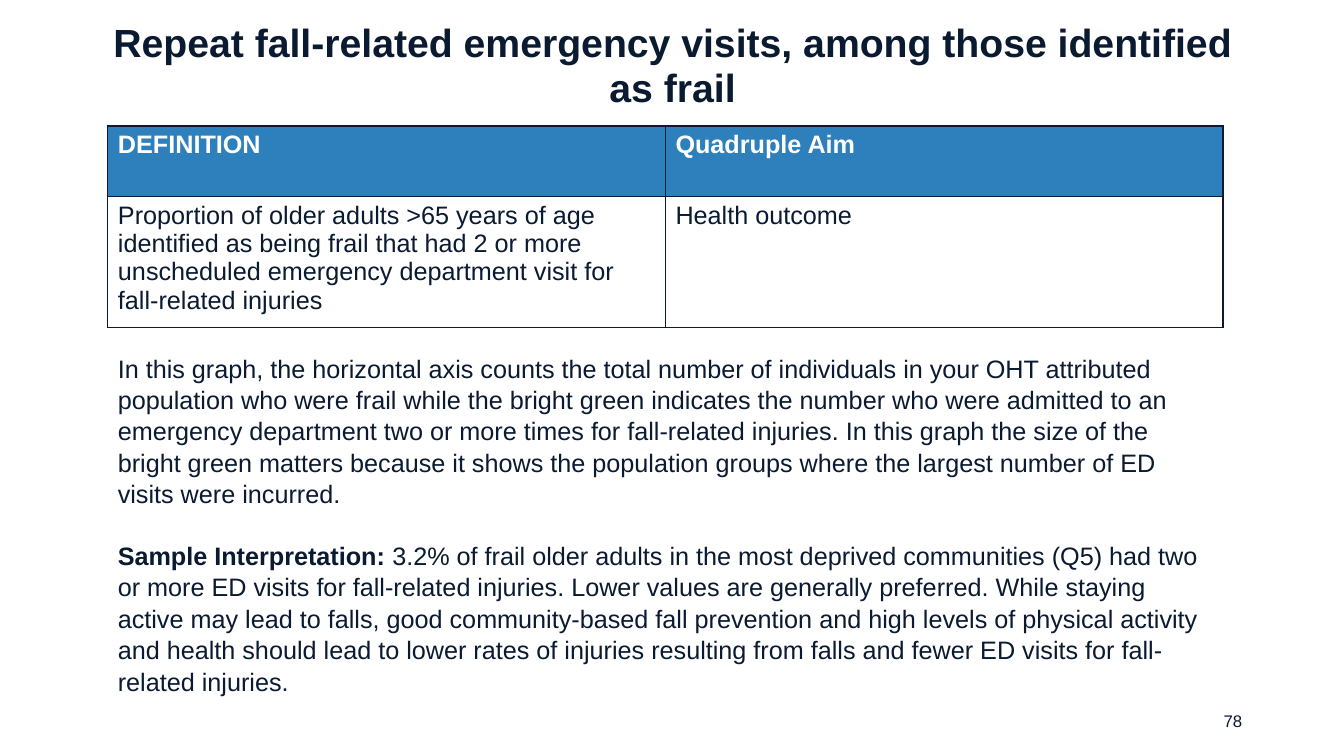
from lxml import etree
from pptx import Presentation
from pptx import util as u
from pptx.dml.color import RGBColor
from pptx.enum import text
from pptx.oxml.ns import qn

PX = 9144
COLOURS = {"ink": "0A1A31", "header": "2E80BD", "white": "FFFFFF"}


class FrailtySlide:
    """Holds the style and the slide, and draws each kind of element in px."""

    def __init__(self, deck, font="Arial"):
        self.font = font
        self.slide = deck.slides.add_slide(deck.slide_layouts[5])

    def colour(self, name):
        return RGBColor.from_string(COLOURS[name])

    def format(self, paragraph, size, colour="ink", bold=False):
        for run in paragraph.runs:
            run.font.name = self.font
            run.font.size = u.Pt(size)
            run.font.bold = bold
            run.font.color.rgb = self.colour(colour)

    def title(self, wording, left, top, width, height):
        heading = self.slide.shapes.title
        heading.left, heading.top = left * PX, top * PX
        heading.width, heading.height = width * PX, height * PX
        frame = heading.text_frame
        frame.text = wording
        frame.word_wrap = True
        frame.auto_size = text.MSO_AUTO_SIZE.NONE
        frame.vertical_anchor = text.MSO_ANCHOR.MIDDLE
        paragraph = frame.paragraphs[0]
        paragraph.alignment = text.PP_ALIGN.CENTER
        paragraph.line_spacing = 0.95
        self.format(paragraph, 28, bold=True)

    def textbox(self, left, top, width, height, anchor=text.MSO_ANCHOR.TOP):
        box = self.slide.shapes.add_textbox(left * PX, top * PX, width * PX, height * PX)
        box.text_frame.word_wrap = True
        box.text_frame.vertical_anchor = anchor
        return box.text_frame

    def page_number(self, number, left, top, width, height):
        frame = self.textbox(left, top, width, height, text.MSO_ANCHOR.MIDDLE)
        frame.text = number
        frame.paragraphs[0].alignment = text.PP_ALIGN.RIGHT
        self.format(frame.paragraphs[0], 12)

    def explanation(self, reading, label, example, left, top, width, height):
        frame = self.textbox(left, top, width, height)
        frame.text = reading
        sample = frame.add_paragraph()
        sample.text = label
        sample.add_run().text = example
        sample.space_before = u.Pt(21.6)
        for paragraph in frame.paragraphs:
            paragraph.line_spacing = 1.04
            self.format(paragraph, 18)
        sample.runs[0].font.bold = True

    def outline(self, cell):
        properties = cell._tc.get_or_add_tcPr()
        for index, side in enumerate(("a:lnL", "a:lnR", "a:lnT", "a:lnB")):
            line = etree.Element(qn(side), w=str(u.Pt(1)))
            fill = etree.SubElement(line, qn("a:solidFill"))
            etree.SubElement(fill, qn("a:srgbClr"), val=COLOURS["ink"])
            properties.insert(index, line)

    def table(self, rows, heights, left, top, width):
        columns = len(rows[0])
        grid = self.slide.shapes.add_table(
            len(rows), columns, left * PX, top * PX, width * PX, sum(heights) * PX
        ).table
        for row_index, (row, height) in enumerate(zip(rows, heights)):
            is_header = row_index == 0
            grid.rows[row_index].height = height * PX
            for column_index, wording in enumerate(row):
                cell = grid.cell(row_index, column_index)
                cell.text = wording
                cell.fill.solid()
                cell.fill.fore_color.rgb = self.colour("header" if is_header else "white")
                self.outline(cell)
                self.format(cell.text_frame.paragraphs[0], 18,
                            "white" if is_header else "ink", is_header)


def main():
    deck = Presentation()
    deck.slide_width, deck.slide_height = 1333 * PX, 750 * PX
    page = FrailtySlide(deck)
    page.page_number("78", 942, 695, 300, 40)
    page.title("Repeat fall-related emergency visits, among those identified as frail",
               77, 24, 1180, 84)
    page.table(
        [
            ("DEFINITION", "Quadruple Aim"),
            ("Proportion of older adults >65 years of age identified as being frail that had "
             "2 or more unscheduled emergency department visit for fall-related injuries",
             "Health outcome"),
        ],
        (70, 130), 107, 125, 1106,
    )
    page.explanation(
        "In this graph, the horizontal axis counts the total number of individuals in your OHT "
        "attributed population who were frail while the bright green indicates the number who "
        "were admitted to an emergency department two or more times for fall-related injuries. "
        "In this graph the size of the bright green matters because it shows the population "
        "groups where the largest number of ED visits were incurred.",
        "Sample Interpretation: ",
        "3.2% of frail older adults in the most deprived communities (Q5) had two or more ED "
        "visits for fall-related injuries. Lower values are generally preferred. While staying "
        "active may lead to falls, good community-based fall prevention and high levels of "
        "physical activity and health should lead to lower rates of injuries resulting from "
        "falls and fewer ED visits for fall-related injuries.",
        107, 344, 1106, 343,
    )


    deck.save("out.pptx")


if __name__ == "__main__":
    main()
